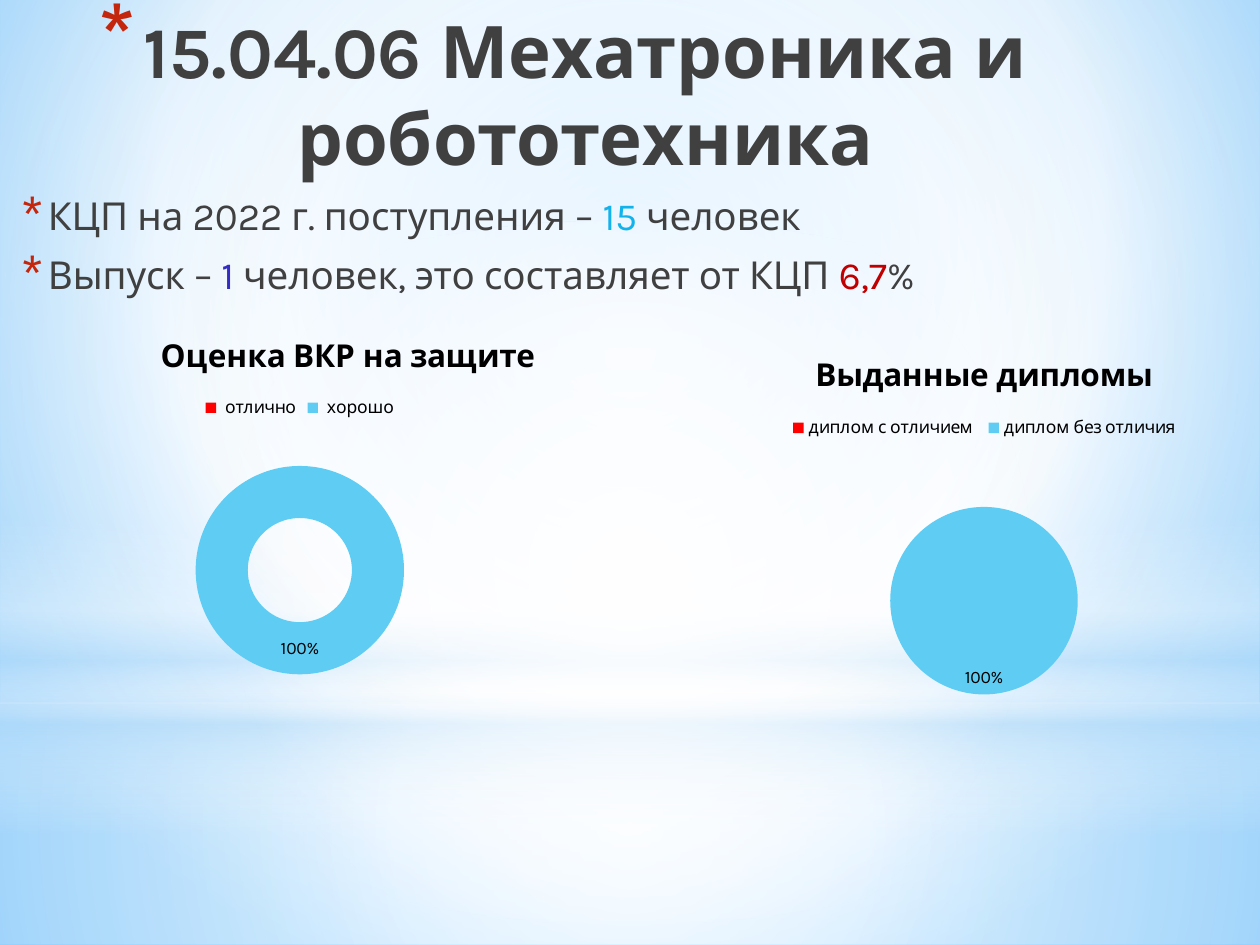
"""Build the mechatronics graduates slide with a doughnut and a pie chart."""
from lxml import etree
from pptx import Presentation
from pptx import util as u
from pptx.chart.data import CategoryChartData
from pptx.dml.color import RGBColor
from pptx.enum import chart as ch, shapes, text
from pptx.oxml import parse_xml
from pptx.oxml.ns import nsdecls, qn

FONT = "Karla"
COLORS = {"text": "404040", "bullet": "C3260C", "cyan": "12B2EB", "violet": "342DC5",
          "dark_red": "C00000", "red": "FF0000", "sky": "5ECCF3", "black": "000000",
          "white": "FFFFFF", "haze": "B4DCFA", "bg_in": "9ED5FF", "bg_out": "5BB9FF"}
CENTER = (50, 50, 50, 50)

BACKGROUND = [(0, "bg_in", 100), (60, "white", 100), (100, "bg_out", 100)]
GLOWS = [
    ("RECTANGLE", (0, 5.58, 10, 1.92), CENTER,
     [(0, "white", 91), (37, "white", 76), (100, "haze", 79)]),
    ("RECTANGLE", (0, 0, 10, 5.58), CENTER,
     [(0, "white", 89), (48, "white", 62), (100, "haze", 79)]),
    ("RECTANGLE", (0, 4.12, 10, 2.5), None,
     [(0, "white", 0), (29, "white", 30), (45, "haze", 40),
      (55, "white", 26), (65, "haze", 60), (100, "white", 0)]),
    ("OVAL", (0, 1.75, 10, 5.58), CENTER, [(0, "white", 100), (56, "white", 0)]),
]
TITLE = [[("15.04.06 Мехатроника и робототехника", "text")]]
BODY = [
    [("КЦП на 2022 г. поступления – ", "text"), ("15 ", "cyan"), ("человек", "text")],
    [("Выпуск – ", "text"), ("1 ", "violet"), ("человек, это составляет от КЦП ", "text"),
     ("6,7", "dark_red"), ("%", "text")],
]
CHARTS = [
    ("DOUGHNUT", (-0.12, 2.49, 5, 3), "Оценка ВКР на защите", (" отлично", " хорошо"), (0.27, 0.04)),
    ("PIE", (5.31, 2.65, 5, 3), "Выданные дипломы", ("диплом с отличием ", "диплом без отличия"), None),
]
VALUES = (0, 100)


def rgb(name):
    return RGBColor.from_string(COLORS[name])


def inches(box):
    return [u.Inches(v) for v in box]


def set_gradient(parent, stops, focus):
    gs = "".join(f'<a:gs pos="{pos * 1000}"><a:srgbClr val="{COLORS[c]}">'
                 f'<a:alpha val="{alpha * 1000}"/></a:srgbClr></a:gs>' for pos, c, alpha in stops)
    if focus:
        rect = " ".join(f'{side}="{v * 1000}"' for side, v in zip("ltrb", focus))
        way = f'<a:path path="circle"><a:fillToRect {rect}/></a:path>'
    else:
        way = '<a:lin ang="5400000" scaled="0"/>'
    grad = parse_xml(f'<a:gradFill {nsdecls("a")} rotWithShape="1"><a:gsLst>{gs}</a:gsLst>{way}</a:gradFill>')
    parent.replace(parent.find(qn("a:solidFill")), grad)


def set_bullet(p, margin, hang, scale, before=0, after=0):
    pPr = p._p.get_or_add_pPr()
    pPr.set("marL", str(u.Inches(margin)))
    pPr.set("indent", str(-u.Inches(hang)))
    parts = [("spcBef", "spcPct", before * 1000), ("spcAft", "spcPts", after * 100),
             ("buClr", "srgbClr", COLORS["bullet"])]
    for tag, child, val in parts:
        el = etree.SubElement(pPr, qn(f"a:{tag}"))
        etree.SubElement(el, qn(f"a:{child}")).set("val", str(val))
    etree.SubElement(pPr, qn("a:buSzPct")).set("val", str(scale * 1000))
    etree.SubElement(pPr, qn("a:buChar")).set("char", "*")


def fill_text(sp, box, paragraphs, size, bold, align, **bullet):
    sp.left, sp.top, sp.width, sp.height = inches(box)
    tf = sp.text_frame
    tf.word_wrap = True
    tf.auto_size = text.MSO_AUTO_SIZE.NONE
    tf.vertical_anchor = text.MSO_ANCHOR.TOP
    for i, runs in enumerate(paragraphs):
        p = tf.add_paragraph() if i else tf.paragraphs[0]
        p.alignment = align
        set_bullet(p, **bullet)
        for words, color in runs:
            r = p.add_run()
            r.text = words
            r.font.name, r.font.size, r.font.bold = FONT, u.Pt(size), bold
            r.font.color.rgb = rgb(color)


def add_ring(slide, kind, box, title, cats, title_at):
    data = CategoryChartData()
    data.categories = cats
    data.add_series("Series 1", VALUES)
    chart = slide.shapes.add_chart(ch.XL_CHART_TYPE[kind], *inches(box), data).chart
    chart.font.name, chart.font.size = FONT, u.Pt(10)
    chart.font.color.rgb = rgb("black")
    chart.has_title = True
    p = chart.chart_title.text_frame.paragraphs[0]
    r = p.add_run()
    r.text = title
    r.font.name, r.font.size, r.font.bold = FONT, u.Pt(18), True
    r.font.color.rgb = rgb("black")
    if title_at:
        x, y = title_at
        layout = parse_xml(f'<c:layout {nsdecls("c")}><c:manualLayout><c:xMode val="edge"/>'
                           f'<c:yMode val="edge"/><c:x val="{x}"/><c:y val="{y}"/>'
                           '</c:manualLayout></c:layout>')
        title_el = chart.chart_title._element
        for old in title_el.findall(qn("c:layout")):
            title_el.remove(old)
        title_el.find(qn("c:tx")).addnext(layout)
    chart.has_legend = True
    chart.legend.position = ch.XL_LEGEND_POSITION.TOP
    chart.legend.include_in_layout = False
    plot = chart.plots[0]
    plot.vary_by_categories = True
    series = plot.series[0]
    for i, color in enumerate(("red", "sky")):
        fill = series.points[i].format.fill
        fill.solid()
        fill.fore_color.rgb = rgb(color)
    explosion = parse_xml(f'<c:explosion {nsdecls("c")} val="25"/>')
    series._element.find(qn("c:dPt")).addprevious(explosion)
    labels = series.data_labels
    labels.show_percentage, labels.show_value = True, False
    labels.number_format, labels.number_format_is_linked = "0%", False
    if kind == "PIE":
        labels.position = ch.XL_LABEL_POSITION.INSIDE_END
    hidden = parse_xml(f'<c:dLbl {nsdecls("c")}><c:idx val="0"/><c:delete val="1"/></c:dLbl>')
    labels._element.insert(0, hidden)


def main():
    prs = Presentation()
    prs.slide_width, prs.slide_height = u.Inches(10), u.Inches(7.5)
    slide = prs.slides.add_slide(prs.slide_layouts[1])
    slide.background.fill.solid()
    set_gradient(slide.element.find(".//" + qn("p:bgPr")), BACKGROUND, (20, 10, 20, 60))
    title, body = slide.placeholders
    for kind, box, focus, stops in GLOWS:
        sp = slide.shapes.add_shape(shapes.MSO_SHAPE[kind], *inches(box))
        sp.shadow.inherit = False
        sp.line.fill.background()
        sp.fill.solid()
        set_gradient(sp._element.spPr, stops, focus)
        title._element.addprevious(sp._element)
    fill_text(title, (0.51, 0, 7.92, 1.25), TITLE, 41.4, True, text.PP_ALIGN.CENTER,
              margin=0.35, hang=0.35, scale=128)
    fill_text(body, (0.03, 1.47, 8.94, 1.02), BODY, 22, False, text.PP_ALIGN.LEFT,
              margin=0.25, hang=0.2, scale=130, before=20, after=3)
    for ring in CHARTS:
        add_ring(slide, *ring)
    prs.save("out.pptx")


if __name__ == "__main__":
    main()
